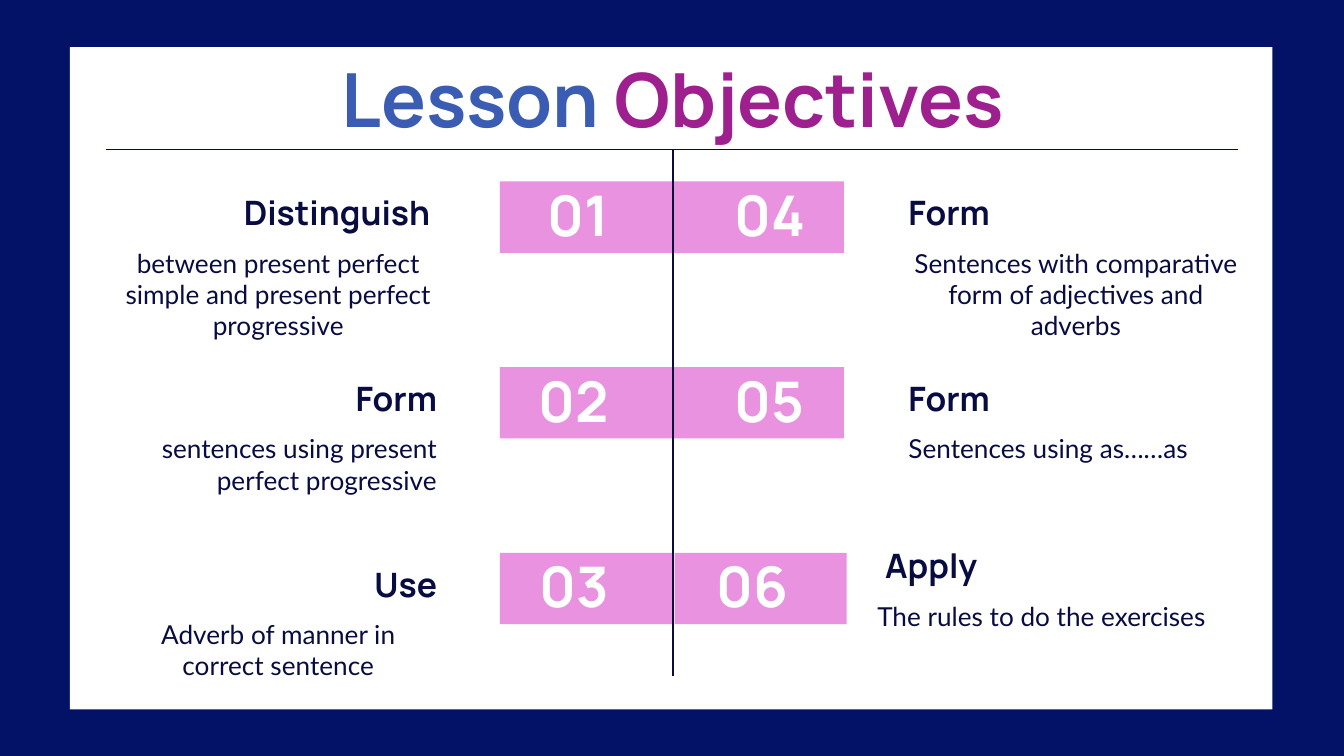
from lxml import etree
from pptx import Presentation
from pptx.dml.color import RGBColor
from pptx.enum.shapes import MSO_CONNECTOR, MSO_SHAPE
from pptx.enum.text import MSO_ANCHOR as ANCHOR, PP_ALIGN as ALIGN
from pptx.oxml.ns import qn
from pptx.util import Cm, Pt

COLORS = {"navy": "031267", "ink": "080C41", "white": "FFFFFF",
          "pink": "E992DF", "blue": "3B5CB3", "purple": "9E208F"}
L, C, R = ALIGN.LEFT, ALIGN.CENTER, ALIGN.RIGHT

prs = Presentation()
prs.slide_width, prs.slide_height = Cm(25.4), Cm(14.29)
slide = prs.slides.add_slide(prs.slide_layouts[6])
slide.background.fill.solid()
slide.background.fill.fore_color.rgb = RGBColor.from_string(COLORS["navy"])


def add_block(left, top, width, height, color):
    block = slide.shapes.add_shape(MSO_SHAPE.RECTANGLE, Cm(left), Cm(top), Cm(width), Cm(height))
    block.shadow.inherit = False
    block.fill.solid()
    block.fill.fore_color.rgb = RGBColor.from_string(COLORS[color])
    block.line.fill.background()


def add_text(box, runs, size, align, anchor=ANCHOR.MIDDLE, font="Manrope"):
    """Place (text, color) runs as one paragraph in box (left, top, width, height)."""
    frame = slide.shapes.add_textbox(*map(Cm, box)).text_frame
    frame.word_wrap = True
    frame.vertical_anchor = anchor
    frame.margin_left = frame.margin_right = Cm(0.25)
    frame.margin_top = frame.margin_bottom = Cm(0.25)
    paragraph = frame.paragraphs[0]
    paragraph.alignment = align
    for text, color in runs:
        run = paragraph.add_run()
        run.text = text
        run.font.name = font
        run.font.size = Pt(size)
        run.font.bold = font == "Manrope"
        run.font.color.rgb = RGBColor.from_string(COLORS[color])


# Panel, number bars and dividing lines
FIRST_BAR, ROW_STEP, BAR_HEIGHT = 3.43, 3.51, 1.35
add_block(1.32, 0.89, 22.73, 12.52, "white")
for row, bars in enumerate([[(9.45, 6.5)], [(9.45, 6.5)], [(9.45, 3.25), (12.75, 3.25)]]):
    for left, width in bars:
        add_block(left, FIRST_BAR + row * ROW_STEP, width, BAR_HEIGHT, "pink")

for x1, y1, x2, y2 in [(2.01, 2.82, 23.39, 2.82), (12.72, 2.82, 12.72, 12.78)]:
    divider = slide.shapes.add_connector(MSO_CONNECTOR.STRAIGHT, Cm(x1), Cm(y1), Cm(x2), Cm(y2))
    divider.line.color.rgb = RGBColor.from_string(COLORS["ink"])
    divider.line.width = Pt(0.75)
    etree.SubElement(divider._element.spPr, qn("a:effectLst"))

add_text((2.01, 1.07, 21.41, 1.57), [("Lesson ", "blue"), ("Objectives", "purple")], 40, C)

# row, number (left, align), heading (text, left, align), body (text, left, width, align), lift
objectives = [
    (0, (9.17, R), ("Distinguish ", 2.01, R),
     ("between present perfect simple and present perfect progressive", 2.01, 6.5, C), 0),
    (1, (9.17, R), ("Form", 2.01, R),
     ("sentences using present perfect progressive", 2.01, 6.5, R), 0),
    (2, (9.17, R), ("Use", 2.01, R),
     ("Adverb of manner in correct sentence", 2.01, 6.5, C), 0),
    (0, (13.64, L), ("Form", 16.92, L),
     ("Sentences with comparative form of adjectives and adverbs", 16.92, 6.83, C), 0),
    (1, (13.64, L), ("Form", 16.92, L),
     ("Sentences using as……as", 16.92, 6.5, L), 0),
    (2, (12.55, R), ("Apply", 16.48, L),
     ("The rules to do the exercises", 16.33, 7.19, L), 0.35),
]
for number, (row, place, heading, body, lift) in enumerate(objectives, start=1):
    row_top = 3.28 + row * ROW_STEP
    number_left, number_align = place
    title, title_left, title_align = heading
    detail, detail_left, detail_width, detail_align = body
    add_text((number_left, row_top, 2.59, 1.65), [(f"{number:02}", "white")], 30,
             number_align, ANCHOR.BOTTOM)
    add_text((title_left, row_top - lift, 6.5, 1.47), [(title, "ink")], 18, title_align)
    add_text((detail_left, row_top + 1.14 - lift, detail_width, 1.35), [(detail, "ink")], 14,
             detail_align, ANCHOR.TOP, "Lato")

prs.save("out.pptx")
